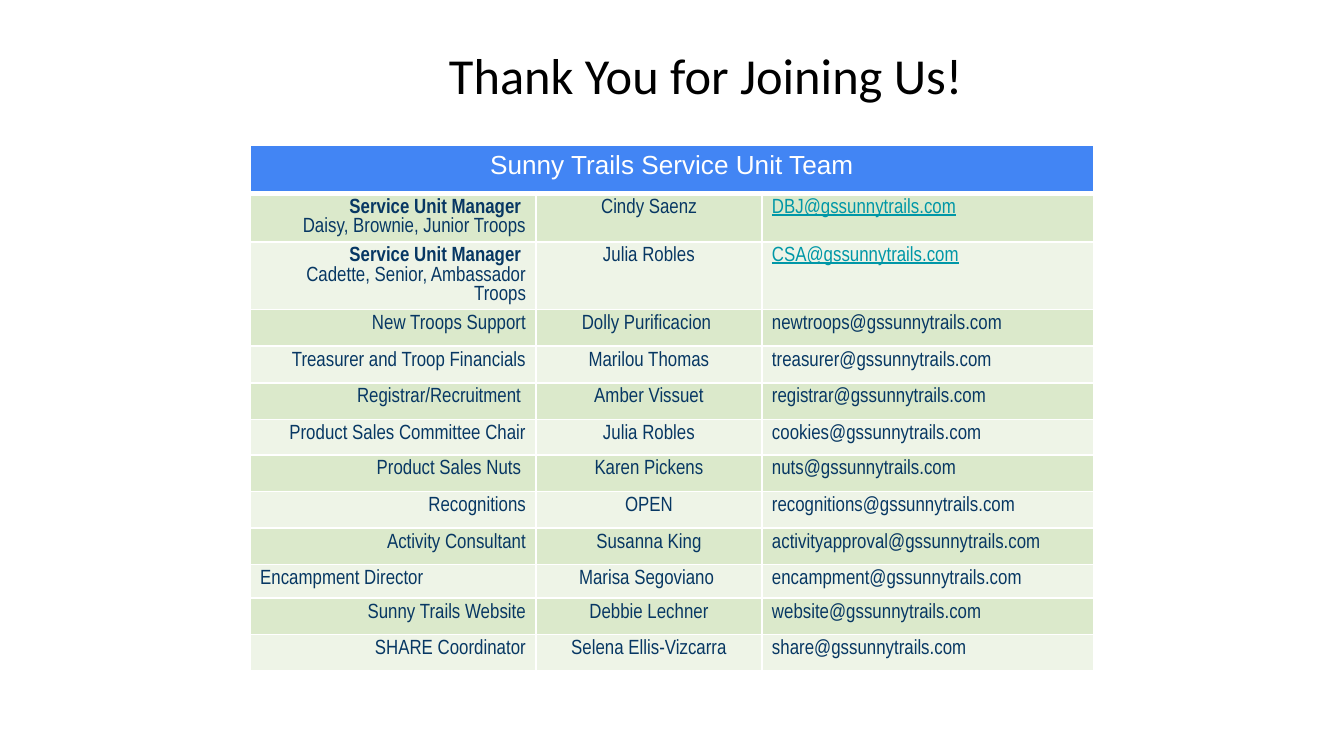
import dataclasses

import pptx
import pptx.dml.color
import pptx.enum.text
import pptx.oxml
import pptx.oxml.ns
import pptx.util

Pt = pptx.util.Pt
Align = pptx.enum.text.PP_ALIGN
Anchor = pptx.enum.text.MSO_ANCHOR

NAVY, TEAL, WHITE, BLACK = "073763", "0097A7", "FFFFFF", "000000"
HEADER_BLUE = "4285F4"
BAND_FILLS = ("DBE9CB", "EEF4E7")
COLUMN_WIDTHS = (153.2, 121, 177.8)
HEADER_HEIGHT = 25.5


@dataclasses.dataclass
class Member:
    role: str
    name: str
    email: str
    troops: str = ""
    role_align: Align = Align.RIGHT
    height: float = 19.6


TEAM = [
    Member("Service Unit Manager ", "Cindy Saenz", "DBJ@gssunnytrails.com",
           troops="Daisy, Brownie, Junior Troops"),
    Member("Service Unit Manager ", "Julia Robles", "CSA@gssunnytrails.com",
           troops="Cadette, Senior, Ambassador Troops"),
    Member("New Troops Support", "Dolly Purificacion ", "newtroops@gssunnytrails.com"),
    Member("Treasurer and Troop Financials", "Marilou Thomas", "treasurer@gssunnytrails.com"),
    Member("Registrar/Recruitment ", "Amber Vissuet", "registrar@gssunnytrails.com"),
    Member("Product Sales Committee Chair", "Julia Robles", "cookies@gssunnytrails.com",
           height=19),
    Member("Product Sales Nuts ", "Karen Pickens", "nuts@gssunnytrails.com"),
    Member("Recognitions", "OPEN", "recognitions@gssunnytrails.com"),
    Member("Activity Consultant", "Susanna King", "activityapproval@gssunnytrails.com"),
    Member("Encampment Director", "Marisa Segoviano ", "encampment@gssunnytrails.com",
           role_align=Align.LEFT, height=18),
    Member("Sunny Trails Website", "Debbie Lechner", "website@gssunnytrails.com"),
    Member("SHARE Coordinator", "Selena Ellis-Vizcarra", "share@gssunnytrails.com"),
]


def color(value: str) -> pptx.dml.color.RGBColor:
    return pptx.dml.color.RGBColor.from_string(value)


def write(paragraph, text: str, *, size: float = 11, font: str = "Arial Narrow",
          fill: str = NAVY, align: Align = Align.LEFT, bold: bool = False,
          underline: bool = False, spacing: float = 1) -> None:
    paragraph.alignment = align
    paragraph.line_spacing = spacing
    paragraph.space_before = Pt(0)
    run = paragraph.add_run()
    run.text = text
    run.font.size = Pt(size)
    run.font.name = font
    run.font.bold = bold
    run.font.underline = underline
    run.font.color.rgb = color(fill)


def style_cell(cell, fill: str, top: float = 1, bottom: float = 1) -> None:
    """Set white borders, margins and fill."""
    properties = cell._tc.get_or_add_tcPr()
    for side, width in (("L", 1), ("R", 1), ("T", top), ("B", bottom)):
        properties.append(pptx.oxml.parse_xml(
            f'<a:ln{side} {pptx.oxml.ns.nsdecls("a")} w="{Pt(width)}">'
            f'<a:solidFill><a:srgbClr val="{WHITE}"/></a:solidFill></a:ln{side}>'))
    cell.fill.solid()
    cell.fill.fore_color.rgb = color(fill)
    cell.margin_left = cell.margin_right = Pt(5.4)
    cell.margin_top = cell.margin_bottom = Pt(2.7)
    cell.vertical_anchor = Anchor.TOP


def add_title(slide, text: str) -> None:
    title = slide.shapes.title
    title.left, title.top, title.width, title.height = Pt(54.4), Pt(19.6), Pt(647.3), Pt(44.6)
    frame = title.text_frame
    frame.auto_size = pptx.enum.text.MSO_AUTO_SIZE.NONE
    frame.vertical_anchor = Anchor.MIDDLE
    frame.margin_left = frame.margin_right = Pt(5)
    frame.margin_top = frame.margin_bottom = Pt(2.7)
    write(frame.paragraphs[0], text, size=27, font="Calibri", fill=BLACK,
          align=Align.CENTER, spacing=0.9)


def fill_member_row(table, row: int, member: Member) -> None:
    table.rows[row].height = Pt(member.height)
    cells = [table.cell(row, column) for column in range(len(COLUMN_WIDTHS))]
    for cell in cells:
        style_cell(cell, BAND_FILLS[(row - 1) % 2], top=3 if row == 1 else 1)
    role, name, email = (cell.text_frame for cell in cells)
    is_manager = bool(member.troops)
    write(role.paragraphs[0], member.role, align=member.role_align, bold=is_manager)
    if is_manager:
        write(role.add_paragraph(), member.troops, align=member.role_align)
    write(name.paragraphs[0], member.name, align=Align.CENTER)
    write(email.paragraphs[0], member.email, fill=TEAL if is_manager else NAVY,
          underline=is_manager)


def add_team_table(slide, heading: str, team: list[Member]) -> None:
    height = HEADER_HEIGHT + sum(member.height for member in team)
    table = slide.shapes.add_table(
        len(team) + 1, len(COLUMN_WIDTHS), Pt(134), Pt(78),
        Pt(sum(COLUMN_WIDTHS)), Pt(height)).table
    for column, width in zip(table.columns, COLUMN_WIDTHS):
        column.width = Pt(width)

    # Heading across all columns
    table.rows[0].height = Pt(HEADER_HEIGHT)
    for cell in table.rows[0].cells:
        style_cell(cell, HEADER_BLUE, bottom=3)
    heading_cell = table.cell(0, 0)
    heading_cell.merge(table.cell(0, len(COLUMN_WIDTHS) - 1))
    write(heading_cell.text_frame.paragraphs[0], heading, size=14, font="Arial",
          fill=WHITE, align=Align.CENTER)

    # One row per team member
    for row, member in enumerate(team, start=1):
        fill_member_row(table, row, member)


def main() -> None:
    presentation = pptx.Presentation()
    presentation.slide_width, presentation.slide_height = Pt(720), Pt(405)
    slide = presentation.slides.add_slide(presentation.slide_layouts.get_by_name("Title Only"))
    add_team_table(slide, "Sunny Trails Service Unit Team", TEAM)
    add_title(slide, "Thank You for Joining Us!")
    presentation.save("out.pptx")


if __name__ == "__main__":
    main()
